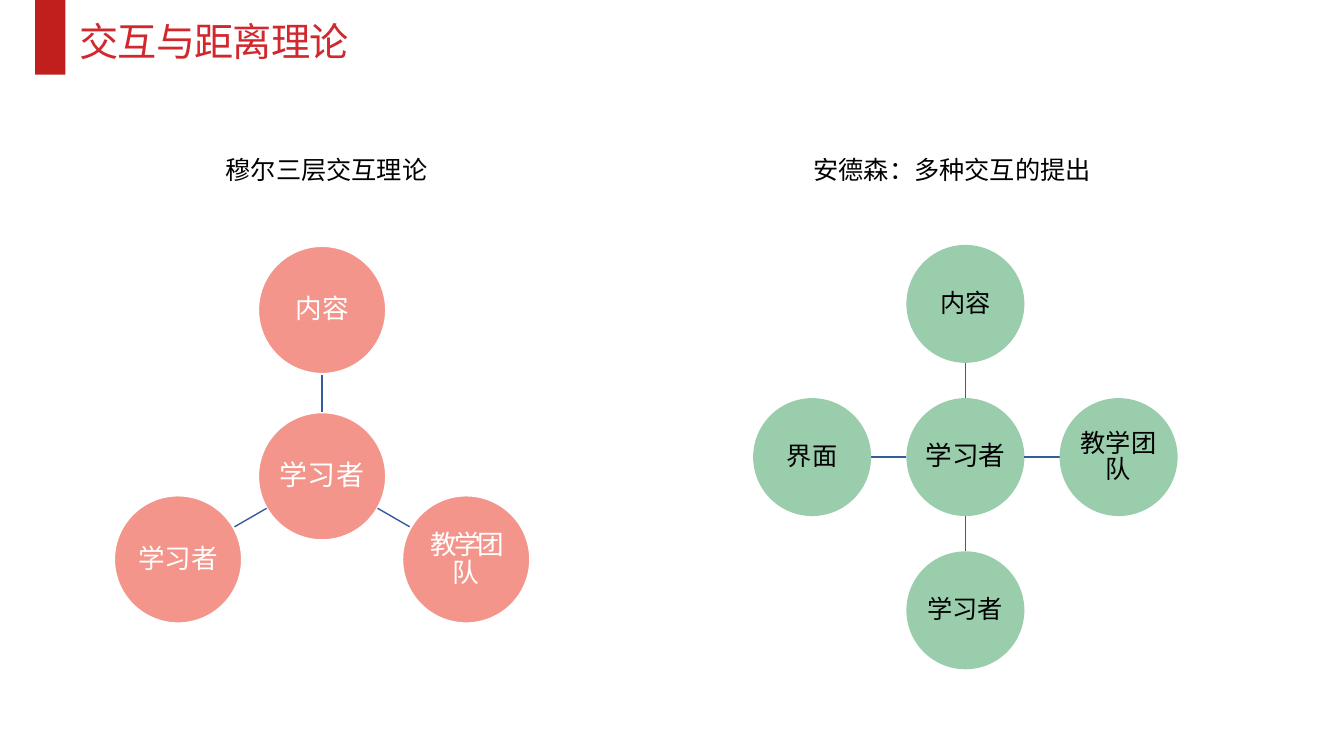
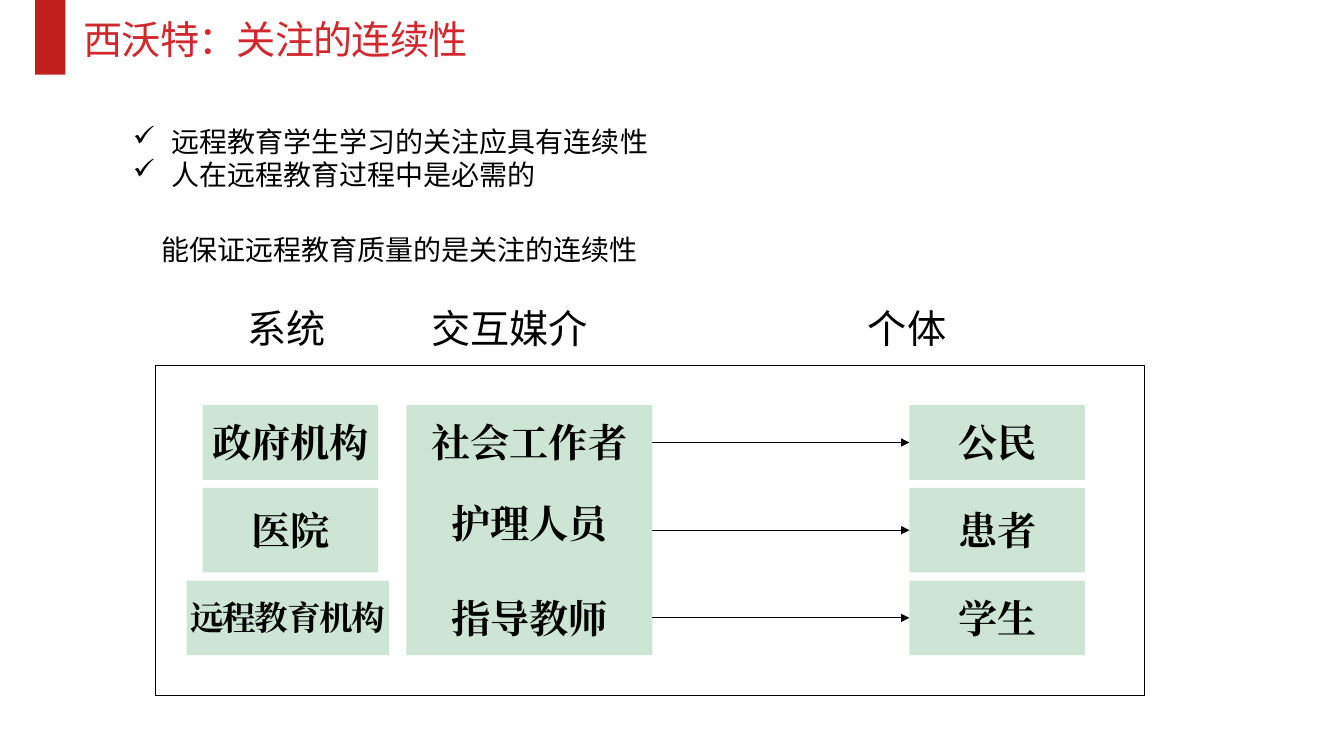
from collections import namedtuple
from math import cos, radians, sin

from lxml.etree import SubElement
from pptx import Presentation
from pptx.dml.color import RGBColor
from pptx.enum.shapes import MSO_CONNECTOR, MSO_SHAPE
from pptx.enum.text import MSO_ANCHOR, MSO_AUTO_SIZE, PP_ALIGN
from pptx.oxml.ns import qn
from pptx.util import Inches, Pt

COLORS = {
    "band": "C11E1E", "title": "D1282E", "ink": "000000", "paper": "FFFFFF",
    "coral": "F3958B", "green": "9ACDAC", "spoke": "365B9D",
}
SANS = "Noto Sans CJK SC"
SERIF = "Times New Roman"
LINE_RATIO = 1.18
CELL = Inches(0.1)

Box = namedtuple("Box", "col row cols rows")
Style = namedtuple("Style", "size color font bold spacing", defaults=("ink", SANS, False, 0))
Hub = namedtuple("Hub", "diameter arm fill outline")

TITLE_STYLE = Style(28, "title", spacing=-0.6)
CAPTION_STYLE = Style(18)
BODY_STYLE = Style(20)
HEADING_STYLE = Style(28)
BAR_STYLE = Style(28, font=SERIF, bold=True)


def rgb(name):
    """Return the named palette colour."""
    return RGBColor.from_string(COLORS[name])


def inside(parent, col, row, cols, rows):
    """Return a box whose origin is measured from its parent."""
    return Box(parent.col + col, parent.row + row, cols, rows)


def emu(*cells):
    """Turn grid cells into slide lengths."""
    return [round(cell * CELL) for cell in cells]


def write(frame, lines, style, align=PP_ALIGN.LEFT, ratio=LINE_RATIO, gaps=()):
    """Fill a text frame with one run per line and return its paragraphs."""
    for index, line in enumerate(lines):
        para = frame.paragraphs[0] if index == 0 else frame.add_paragraph()
        para.alignment = align
        para.line_spacing = Pt(round(style.size * ratio, 1))
        para.space_before = Pt(gaps[index] if gaps else 0)
        span = para.add_run()
        span.text = line
        font = span.font
        font.size, font.bold, font.name = Pt(style.size), style.bold, style.font
        font.color.rgb = rgb(style.color)
        properties = font._element
        SubElement(properties, qn("a:ea")).set("typeface", style.font)
        if style.spacing:
            properties.set("spc", str(round(style.spacing * 100)))
    return frame.paragraphs


def add_text(page, box, lines, style):
    """Add a top-anchored text box."""
    frame = page.shapes.add_textbox(*emu(*box)).text_frame
    frame.word_wrap = True
    return write(frame, lines, style)


def add_block(page, kind, box, fill=None, outline=None, width=0.75, alpha=None):
    """Add a flat preset shape with optional fill, outline and opacity."""
    block = page.shapes.add_shape(kind, *emu(*box))
    block.shadow.inherit = False
    if fill:
        block.fill.solid()
        block.fill.fore_color.rgb = rgb(fill)
    else:
        block.fill.background()
    if alpha:
        color = block._element.spPr.find(qn("a:solidFill"))[0]
        SubElement(color, qn("a:alpha")).set("val", str(alpha * 1000))
    if outline:
        block.line.color.rgb = rgb(outline)
        block.line.width = Pt(width)
    else:
        block.line.fill.background()
    return block


def add_line(page, start, end, color, width, arrow=False):
    """Add a straight connector, with an arrowhead at its end if asked."""
    line = page.shapes.add_connector(MSO_CONNECTOR.STRAIGHT, *emu(*start, *end))
    line.line.color.rgb = rgb(color)
    line.line.width = Pt(width)
    if arrow:
        SubElement(line.line._get_or_add_ln(), qn("a:tailEnd")).set("type", "triangle")
    SubElement(line._element.spPr, qn("a:effectLst"))
    return line


def add_page(deck, title, box):
    """Add a title-only page with the red band and its title."""
    page = deck.slides.add_slide(deck.slide_layouts[5])
    add_block(page, MSO_SHAPE.RECTANGLE, Box(3.5, 0, 3, 7.4), "band")
    holder = page.shapes.title
    holder.left, holder.top, holder.width, holder.height = emu(*box)
    frame = holder.text_frame
    frame.auto_size = MSO_AUTO_SIZE.NONE
    frame.vertical_anchor = MSO_ANCHOR.TOP
    frame.word_wrap = True
    write(frame, [title], TITLE_STYLE)
    return page


def add_circle(page, x, y, hub, text, style):
    """Add one labelled circle around a centre point."""
    radius = hub.diameter / 2
    box = Box(x - radius, y - radius, hub.diameter, hub.diameter)
    circle = add_block(page, MSO_SHAPE.OVAL, box, hub.fill, hub.outline, 1.5)
    frame = circle.text_frame
    frame.word_wrap = True
    frame.vertical_anchor = MSO_ANCHOR.MIDDLE
    frame.margin_left = frame.margin_right = Inches(0.01)
    frame.margin_top = frame.margin_bottom = Inches(0.01)
    write(frame, [text], style, PP_ALIGN.CENTER, LINE_RATIO * 0.9)


def add_radial(page, box, hub, center, center_style, leaves):
    """Draw a hub in the middle of the box and evenly turned leaves from the top."""
    x, y = box.col + box.cols / 2, box.row + box.rows / 2
    radius = hub.diameter / 2
    add_circle(page, x, y, hub, center, center_style)
    for index, (text, style) in enumerate(leaves):
        angle = radians(index * 360 / len(leaves) - 90)
        start, end, middle = [
            (x + reach * cos(angle), y + reach * sin(angle))
            for reach in (radius, hub.arm - radius, hub.arm)
        ]
        add_line(page, start, end, "spoke", 1)
        add_circle(page, *middle, hub, text, style)


def add_bar(page, box, lines, style=BAR_STYLE, gaps=()):
    """Add a half-transparent green bar with centred bold text."""
    bar = add_block(page, MSO_SHAPE.RECTANGLE, box, "green", alpha=50)
    bar.text_frame.word_wrap = False
    bar.text_frame.vertical_anchor = MSO_ANCHOR.MIDDLE
    write(bar.text_frame, lines, style, PP_ALIGN.CENTER, gaps=gaps)
    return bar


def add_bullets(page, box, lines):
    """Add a list with hanging check marks."""
    for para in add_text(page, box, lines, BODY_STYLE):
        properties = para._p.get_or_add_pPr()
        properties.set("marL", str(Inches(0.38)))
        properties.set("indent", str(-Inches(0.38)))
        SubElement(properties, qn("a:buChar")).set("char", "✓")


def add_care_chain(page, box):
    """Draw the frame with systems, media and individuals joined by arrows."""
    add_block(page, MSO_SHAPE.RECTANGLE, box, outline="ink")
    gap, heights = 0.8, (7.4, 8.4, 7.4)
    tops = [3.9 + sum(heights[:index]) + gap * index for index in range(len(heights))]
    media_box = inside(box, 24.9, 3.9, 24.4, sum(heights) + 2 * gap)
    media = add_bar(page, media_box, ["社会工作者", "护理人员", "指导教师"], gaps=(0, 25, 35))
    narrow = BAR_STYLE._replace(size=24, spacing=-1)
    systems = [
        ("政府机构", 4.7, 17.4, BAR_STYLE),
        ("医院", 4.7, 17.4, BAR_STYLE),
        ("远程教育机构", 3.1, 20.1, narrow),
    ]
    people = ["公民", "患者", "学生"]
    for index, (top, height) in enumerate(zip(tops, heights)):
        text, col, cols, style = systems[index]
        add_bar(page, inside(box, col, top, cols, height), [text], style)
        person_box = inside(box, 74.8, top, 17.4, height)
        person = add_bar(page, person_box, [people[index]])
        y = person_box.row + height / 2
        start = (media_box.col + media_box.cols, y)
        arrow = add_line(page, start, (person_box.col, y), "ink", 0.75, True)
        arrow.end_connect(person, 1)
        if index == 1:
            arrow.begin_connect(media, 3)


def build_interaction(deck):
    """Build the page comparing two interaction models."""
    page = add_page(deck, "交互与距离理论", Box(6.9, 1.3, 28.9, 5.7))
    add_text(page, Box(21.4, 14.9, 22.8, 4), ["穆尔三层交互理论"], CAPTION_STYLE)
    add_text(page, Box(79.7, 14.9, 29.8, 4), ["安德森：多种交互的提出"], CAPTION_STYLE)
    light = Style(19, "paper")
    add_radial(
        page, Box(11.3, 24.4, 41.3, 45.7), Hub(12.7, 16.5, "coral", "paper"),
        "学习者", light._replace(size=20),
        [("内容", light), ("教学团队", light._replace(spacing=-2)), ("学习者", light)],
    )
    leaves = ["内容", "教学团队", "学习者", "界面"]
    add_radial(
        page, Box(74.7, 24.3, 42.1, 42.1), Hub(11.7, 15.2, "green", None),
        "学习者", Style(19), [(text, CAPTION_STYLE) for text in leaves],
    )


def build_continuity(deck):
    """Build the page on continuity of concern."""
    page = add_page(deck, "西沃特：关注的连续性", Box(7.3, 1.1, 40.4, 5.7))
    points = ["远程教育学生学习的关注应具有连续性", "人在远程教育过程中是必需的"]
    add_bullets(page, Box(12.2, 11.9, 66.7, 11.1), points)
    add_text(page, Box(15, 22.6, 49.7, 4.4), ["能保证远程教育质量的是关注的连续性"], BODY_STYLE)
    for text, col in (("系统", 23.6), ("交互媒介", 41.8), ("个体", 85.1)):
        add_text(page, Box(col, 29.8, 20, 5.7), [text], HEADING_STYLE)
    add_care_chain(page, Box(15.4, 36.3, 98.1, 32.7))


def main():
    """Build and save the deck."""
    deck = Presentation()
    deck.slide_width, deck.slide_height = Inches(13.33), Inches(7.5)
    build_interaction(deck)
    build_continuity(deck)
    deck.save("out.pptx")


if __name__ == "__main__":
    main()
